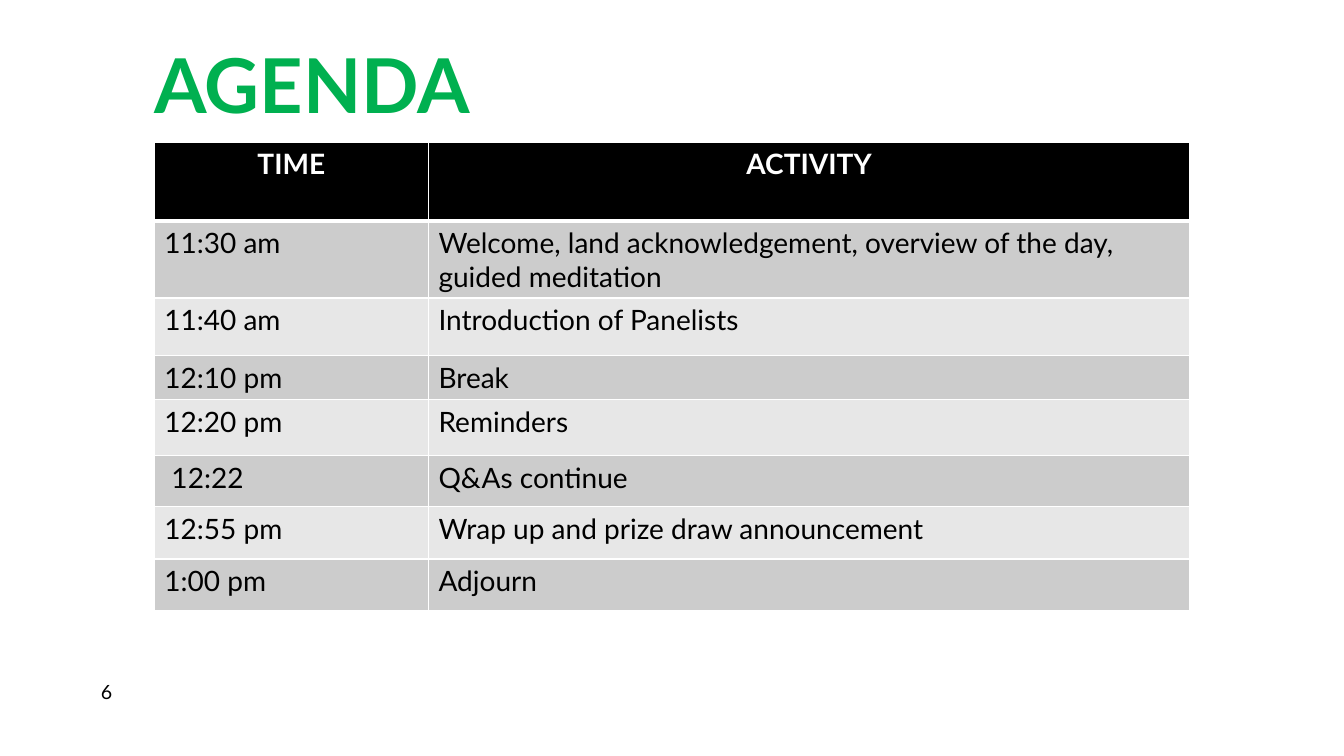
import pptx
import pptx.util
import pptx.dml.color
import pptx.enum.text
import pptx.oxml
import pptx.oxml.ns

# Content
TITLE = "AGENDA"
PAGE = "6"
HEADER = ("TIME", "ACTIVITY")
AGENDA = [
    ("11:30 am", "Welcome, land acknowledgement, overview of the day, guided meditation"),
    ("11:40 am", "Introduction of Panelists"),
    ("12:10 pm", "Break"),
    ("12:20 pm", "Reminders"),
    (" 12:22", "Q&As continue"),
    ("12:55 pm", "Wrap up and prize draw announcement"),
    ("1:00 pm", "Adjourn"),
]

# Format and grid, in inches
COLORS = {"title": "00B050", "head": "000000", "odd": "CCCCCC", "even": "E7E7E7",
          "text": "000000", "light": "FFFFFF"}
FONT = "Lato"
LEFT, TOP = 1.53, 1.41
COLS = (2.72, 7.55)
ROWS = (0.78, 0.76, 0.57, 0.44, 0.55, 0.51, 0.52, 0.51)
TITLE_AT = (1.43, 0.33, 3.5, 1.01)
PAGE_AT = (1, 6.75, 2.67, 0.24)

inch = pptx.util.Inches


def write(tf, text, color, **fmt):
    """Put one formatted run into a text frame."""
    p = tf.paragraphs[0]
    r = p.add_run()
    r.text = text
    for name, value in {"name": FONT, **fmt}.items():
        setattr(r.font, name, value)
    r.font.color.rgb = pptx.dml.color.RGBColor.from_string(COLORS[color])
    return p


def add_text(slide, at, margins, text, color, **fmt):
    tf = slide.shapes.add_textbox(*map(inch, at)).text_frame
    tf.word_wrap = True
    for side, value in margins.items():
        setattr(tf, "margin_" + side, inch(value))
    write(tf, text, color, **fmt)


def set_borders(cell, widths):
    """Draw the cell's sides; widths are points by side letter."""
    tcPr = cell._tc.get_or_add_tcPr()
    for i, (side, width) in enumerate(widths.items()):
        tcPr.insert(i, pptx.oxml.parse_xml(
            f'<a:ln{side} {pptx.oxml.ns.nsdecls("a")} w="{pptx.util.Pt(width)}">'
            f'<a:solidFill><a:srgbClr val="{COLORS["light"]}"/></a:solidFill></a:ln{side}>'))


prs = pptx.Presentation()
prs.slide_width, prs.slide_height = inch(13.33), inch(7.5)
s = prs.slides.add_slide(prs.slide_layouts[6])

# Page number
add_text(s, PAGE_AT, dict.fromkeys(("left", "top", "right", "bottom"), 0),
         PAGE, "text", size=pptx.util.Pt(14))

# Agenda table
table = s.shapes.add_table(len(ROWS), len(COLS), inch(LEFT), inch(TOP),
                           inch(sum(COLS)), inch(sum(ROWS))).table
for column, width in zip(table.columns, COLS):
    column.width = inch(width)
for i, (texts, height) in enumerate(zip([HEADER] + AGENDA, ROWS)):
    table.rows[i].height = inch(height)
    head = i == 0
    fill = "head" if head else "odd" if i % 2 else "even"
    for j, text in enumerate(texts):
        cell = table.cell(i, j)
        cell.fill.solid()
        cell.fill.fore_color.rgb = pptx.dml.color.RGBColor.from_string(COLORS[fill])
        p = write(cell.text_frame, text, "light" if head else "text",
                  size=pptx.util.Pt(20), bold=head)
        if head:
            p.alignment = pptx.enum.text.PP_ALIGN.CENTER
        set_borders(cell, {"L": 1, "R": 1, "T": 3 if i == 1 else 1, "B": 3 if head else 1})

# Title
add_text(s, TITLE_AT, {}, TITLE, "title", size=pptx.util.Pt(54), bold=True)

prs.save("out.pptx")
